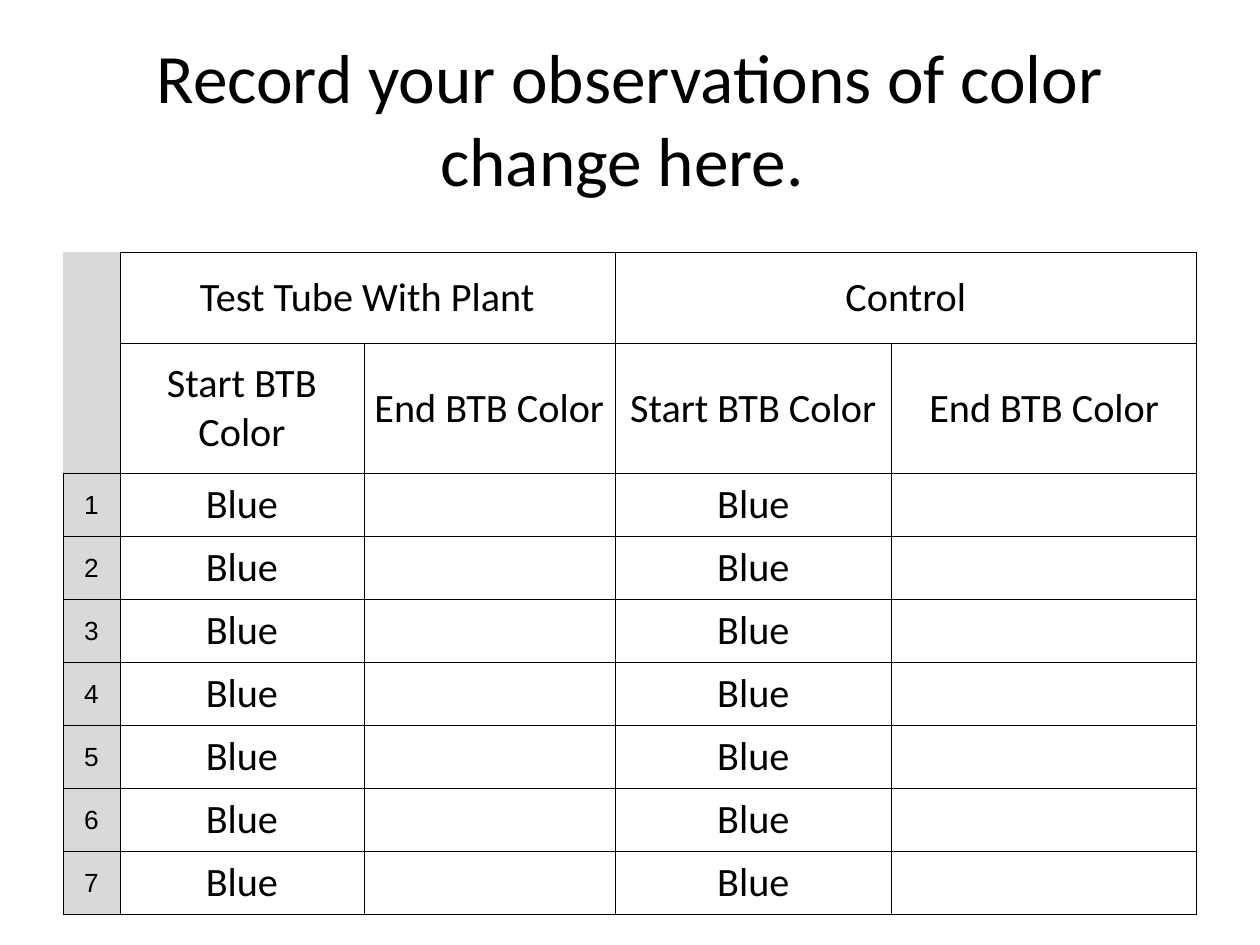
import dataclasses

import pptx
import pptx.dml.color
import pptx.enum.text
import pptx.oxml
import pptx.oxml.ns
import pptx.util

PX = 914400 / 126
COLORS = {"ink": "000000", "label": "D9D9D9"}
COLUMN_WIDTHS = [57, 244, 251, 277, 305]
ROW_HEIGHTS = [91, 130] + [63] * 7
ALL_SIDES = "LRTB"


@dataclasses.dataclass
class Entry:
    text: str = ""
    size: float = 23
    font: str = "Calibri"
    fill: str = ""
    sides: str = ALL_SIDES
    span: int = 1


def px(length: int) -> pptx.util.Emu:
    return pptx.util.Emu(round(length * PX))


def rgb(name: str) -> pptx.dml.color.RGBColor:
    return pptx.dml.color.RGBColor.from_string(COLORS[name])


def write_text(frame, text: str, *, size: float, font: str = "Calibri", color: str = "ink") -> None:
    paragraph = frame.paragraphs[0]
    paragraph.alignment = pptx.enum.text.PP_ALIGN.CENTER
    run = paragraph.add_run()
    run.text = text
    run.font.size = pptx.util.Pt(size)
    run.font.name = font
    run.font.color.rgb = rgb(color)


def set_borders(cell, sides: str) -> None:
    """Draw half-point lines on the named sides and clear the others."""
    properties = cell._tc.get_or_add_tcPr()
    namespace = pptx.oxml.ns.nsdecls("a")
    solid = f'<a:solidFill><a:srgbClr val="{COLORS["ink"]}"/></a:solidFill>'
    for side in ALL_SIDES:
        paint = solid if side in sides else "<a:noFill/>"
        properties.append(pptx.oxml.parse_xml(f'<a:ln{side} {namespace} w="6350">{paint}</a:ln{side}>'))


def fill_cell(cell, entry: Entry) -> None:
    set_borders(cell, entry.sides)
    if entry.fill:
        cell.fill.solid()
        cell.fill.fore_color.rgb = rgb(entry.fill)
    else:
        cell.fill.background()
    cell.margin_left = cell.margin_right = cell.margin_top = px(1)
    cell.margin_bottom = 0
    cell.vertical_anchor = pptx.enum.text.MSO_ANCHOR.MIDDLE
    if entry.text:
        write_text(cell.text_frame, entry.text, size=entry.size, font=entry.font)


def observation_rows() -> list[list[Entry]]:
    groups = [Entry(fill="label", sides="R")]
    for group in ("Test Tube With Plant", "Control"):
        groups += [Entry(group, span=2), Entry()]
    headings = [Entry(fill="label", sides="RB")]
    headings += [Entry("Start BTB Color"), Entry("End BTB Color")] * 2
    trials = [
        [Entry(str(number), size=15, font="Arial", fill="label")] + [Entry("Blue"), Entry()] * 2
        for number in range(1, 8)
    ]
    return [groups, headings, *trials]


def add_observations(slide) -> None:
    table = slide.shapes.add_table(
        len(ROW_HEIGHTS), len(COLUMN_WIDTHS), px(63), px(252), px(sum(COLUMN_WIDTHS)), px(sum(ROW_HEIGHTS))
    ).table
    table.first_row = table.horz_banding = False
    for column, width in zip(table.columns, COLUMN_WIDTHS):
        column.width = px(width)
    for row, height in zip(table.rows, ROW_HEIGHTS):
        row.height = px(height)
    for r, entries in enumerate(observation_rows()):
        for c, entry in enumerate(entries):
            cell = table.cell(r, c)
            fill_cell(cell, entry)
            if entry.span > 1:
                cell.merge(table.cell(r, c + entry.span - 1))


def add_title(slide) -> None:
    title = slide.shapes.title
    title.left, title.top, title.width, title.height = px(63), px(38), px(1134), px(158)
    title.text_frame.word_wrap = True
    title.text_frame.auto_size = pptx.enum.text.MSO_AUTO_SIZE.NONE
    title.text_frame.vertical_anchor = pptx.enum.text.MSO_ANCHOR.MIDDLE
    write_text(title.text_frame, "Record your observations of color change here. ", size=39.6)


def main() -> None:
    presentation = pptx.Presentation()
    presentation.slide_width, presentation.slide_height = px(1260), px(945)
    slide = presentation.slides.add_slide(presentation.slide_layouts[5])
    add_title(slide)
    add_observations(slide)
    presentation.save("out.pptx")


if __name__ == "__main__":
    main()
